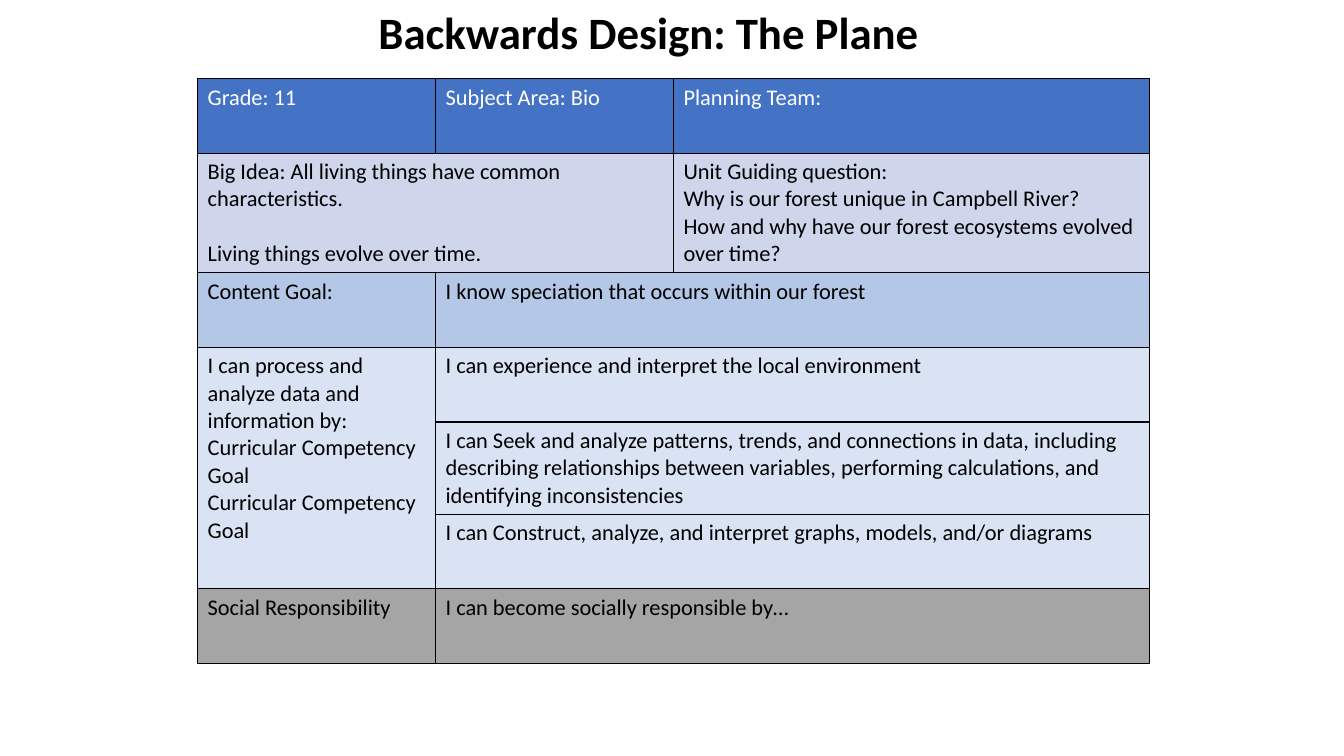
from dataclasses import dataclass

from lxml import etree
from pptx import Presentation
from pptx.dml.color import RGBColor
from pptx.enum.text import MSO_AUTO_SIZE, PP_ALIGN
from pptx.oxml.ns import qn
from pptx.slide import Slide
from pptx.table import Table, _Cell
from pptx.text.text import _Paragraph
from pptx.util import Inches, Pt

CENTER = PP_ALIGN.CENTER
GROW = MSO_AUTO_SIZE.SHAPE_TO_FIT_TEXT

BLACK = RGBColor(0x00, 0x00, 0x00)
WHITE = RGBColor(0xFF, 0xFF, 0xFF)
HEADER_BLUE = RGBColor(0x44, 0x72, 0xC4)
IDEA_LAVENDER = RGBColor(0xCF, 0xD5, 0xEA)
CONTENT_BLUE = RGBColor(0xB4, 0xC7, 0xE7)
COMPETENCY_BLUE = RGBColor(0xDA, 0xE3, 0xF3)
SOCIAL_GRAY = RGBColor(0xA5, 0xA5, 0xA5)

FONT = "Calibri"
TITLE_SIZE = 32
BODY_SIZE = 16
LINE_GAP = 19.5
BORDER_WIDTH = 1
BORDER_SIDES = ("a:lnL", "a:lnR", "a:lnT", "a:lnB")

SLIDE_W, SLIDE_H = Inches(13.33), Inches(7.5)
PLAN_LEFT, PLAN_TOP = Inches(1.96), Inches(0.78)
COLUMN, ROW = Inches(2.36), Inches(0.74)
COLUMN_UNITS = (1, 1, 2)
ROW_COUNT = 7


@dataclass(frozen=True)
class PlanEntry:
    row: int
    column: int
    lines: tuple[str, ...]
    fill: RGBColor
    row_span: int = 1
    column_span: int = 1
    color: RGBColor = BLACK
    gap: float = 0


ENTRIES = (
    PlanEntry(0, 0, ("Grade: 11",), HEADER_BLUE, color=WHITE),
    PlanEntry(0, 1, ("Subject Area: Bio",), HEADER_BLUE, color=WHITE),
    PlanEntry(0, 2, ("Planning Team:",), HEADER_BLUE, color=WHITE),
    PlanEntry(1, 0, (
        "Big Idea: All living things have common characteristics.",
        "Living things evolve over time.",
    ), IDEA_LAVENDER, column_span=2, gap=LINE_GAP),
    PlanEntry(1, 2, (
        "Unit Guiding question:",
        "Why is our forest unique in Campbell River?",
        "How and why have our forest ecosystems evolved over time?",
    ), IDEA_LAVENDER),
    PlanEntry(2, 0, ("Content Goal:",), CONTENT_BLUE),
    PlanEntry(2, 1, ("I know speciation that occurs within our forest",),
              CONTENT_BLUE, column_span=2),
    PlanEntry(3, 0, (
        "I can process and analyze data and information by:",
        "Curricular Competency Goal",
        "Curricular Competency Goal",
    ), COMPETENCY_BLUE, row_span=3),
    PlanEntry(3, 1, ("I can experience and interpret the local environment",),
              COMPETENCY_BLUE, column_span=2),
    PlanEntry(4, 1, (
        "I can Seek and analyze patterns, trends, and connections in data, "
        "including describing relationships between variables, performing "
        "calculations, and identifying inconsistencies",
    ), COMPETENCY_BLUE, column_span=2),
    PlanEntry(5, 1, (
        "I can Construct, analyze, and interpret graphs, models, and/or diagrams",
    ), COMPETENCY_BLUE, column_span=2),
    PlanEntry(6, 0, ("Social Responsibility",), SOCIAL_GRAY),
    PlanEntry(6, 1, ("I can become socially responsible by…",),
              SOCIAL_GRAY, column_span=2),
)


def add_run(paragraph: _Paragraph, text: str, size: float, color: RGBColor,
            bold: bool = False) -> None:
    run = paragraph.add_run()
    run.text = text
    run.font.name = FONT
    run.font.size = Pt(size)
    run.font.bold = bold
    run.font.color.rgb = color


def add_borders(cell: _Cell) -> None:
    properties = cell._tc.get_or_add_tcPr()
    for position, side in enumerate(BORDER_SIDES):
        border = etree.Element(qn(side), w=str(Pt(BORDER_WIDTH)))
        paint = etree.SubElement(border, qn("a:solidFill"))
        etree.SubElement(paint, qn("a:srgbClr"), val=str(BLACK))
        properties.insert(position, border)


def draw_entry(plan: Table, entry: PlanEntry) -> None:
    origin = plan.cell(entry.row, entry.column)
    for row in range(entry.row, entry.row + entry.row_span):
        for column in range(entry.column, entry.column + entry.column_span):
            cell = plan.cell(row, column)
            cell.fill.solid()
            cell.fill.fore_color.rgb = entry.fill
            add_borders(cell)
    if entry.row_span > 1 or entry.column_span > 1:
        origin.merge(plan.cell(entry.row + entry.row_span - 1,
                               entry.column + entry.column_span - 1))
    frame = origin.text_frame
    for index, line in enumerate(entry.lines):
        paragraph = frame.add_paragraph() if index else frame.paragraphs[0]
        if index and entry.gap:
            paragraph.space_before = Pt(entry.gap)
        add_run(paragraph, line, BODY_SIZE, entry.color)


def draw_plan(slide: Slide) -> None:
    plan = slide.shapes.add_table(
        ROW_COUNT, len(COLUMN_UNITS), PLAN_LEFT, PLAN_TOP,
        COLUMN * sum(COLUMN_UNITS), ROW * ROW_COUNT).table
    plan.first_row = False
    plan.horz_banding = False
    for column, units in zip(plan.columns, COLUMN_UNITS):
        column.width = COLUMN * units
    for row in plan.rows:
        row.height = ROW
    for entry in ENTRIES:
        draw_entry(plan, entry)


def draw_title(slide: Slide) -> None:
    frame = slide.shapes.add_textbox(
        Inches(1.67), 0, Inches(9.53), Inches(0.64)).text_frame
    frame.word_wrap = True
    frame.auto_size = GROW
    heading = frame.paragraphs[0]
    heading.alignment = CENTER
    add_run(heading, "Backwards Design: The Plane", TITLE_SIZE, BLACK, bold=True)


def main() -> None:
    deck = Presentation()
    deck.slide_width, deck.slide_height = SLIDE_W, SLIDE_H
    slide = deck.slides.add_slide(deck.slide_layouts[6])
    draw_plan(slide)
    draw_title(slide)
    deck.save("out.pptx")


if __name__ == "__main__":
    main()
